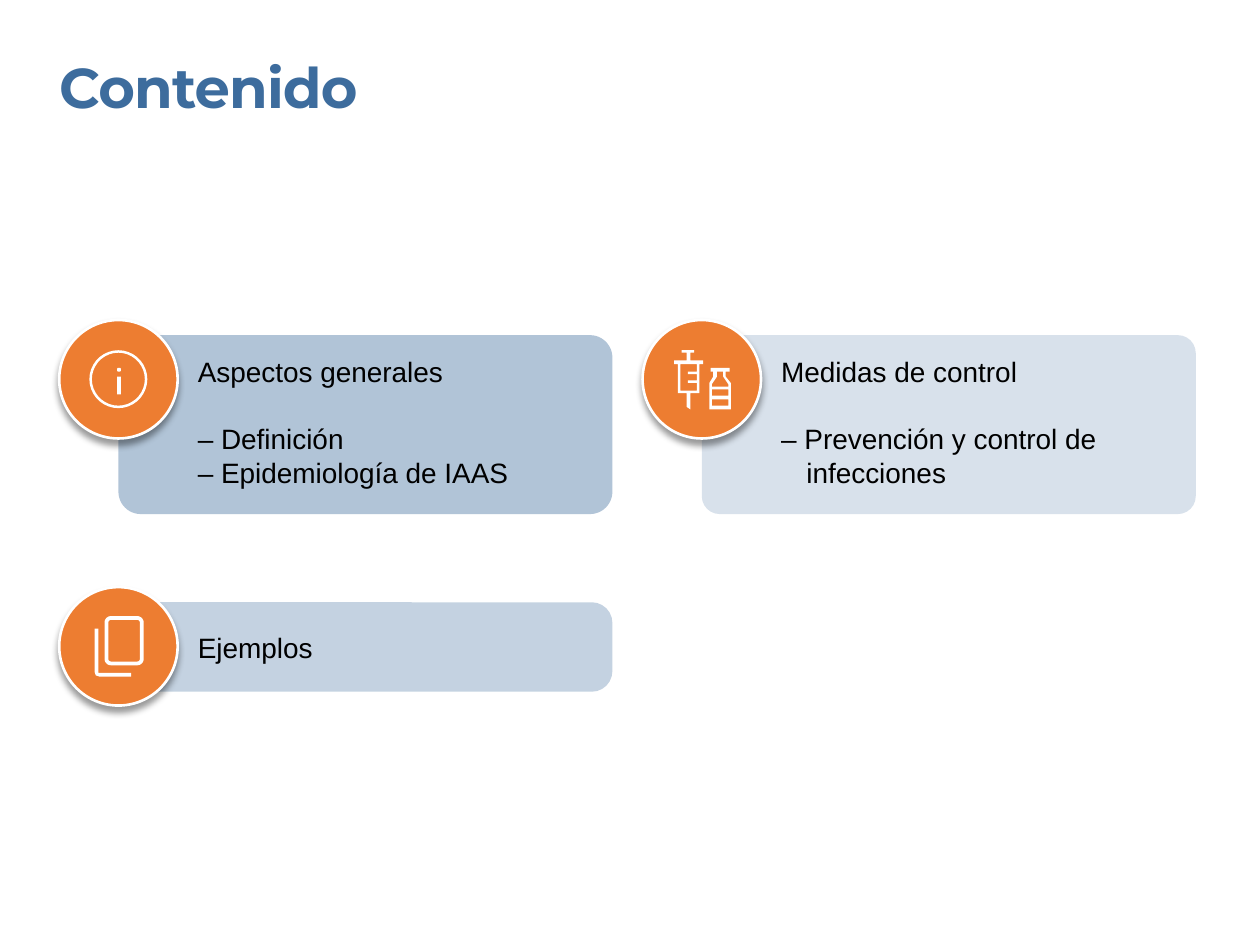
import math

import pptx
import pptx.util
import pptx.dml.color
import pptx.enum.shapes
import pptx.oxml
import pptx.oxml.ns

Inches, Pt = pptx.util.Inches, pptx.util.Pt
SHAPE = pptx.enum.shapes.MSO_SHAPE

COLORS = {"blue": "3D6C9D", "orange": "ED7D31", "white": "FFFFFF", "black": "000000"}
TITLE = "Contenido"
TITLE_FORMAT = {"name": "Montserrat", "size": Pt(32), "bold": True}
BODY_FORMAT = {"name": "Arial", "size": Pt(16)}


def rounded(x, y, width, height, radius):
    """Outline of a rounded rectangle; a large radius makes a circle."""
    centers = [(x + width - radius, y + height - radius), (x + radius, y + height - radius),
               (x + radius, y + radius), (x + width - radius, y + radius)]
    return [(cx + radius * math.cos(angle), cy + radius * math.sin(angle))
            for corner, (cx, cy) in enumerate(centers)
            for angle in (math.radians(90 * corner + 10 * step) for step in range(10))]


def bar(x, y, width, height):
    return [(x, y), (x + width, y), (x + width, y + height), (x, y + height)]


# Icon outlines in inches from the corner of their disc; inner outlines are holes
ICONS = {
    "info": [
        rounded(0.24, 0.24, 0.46, 0.46, 0.23), rounded(0.26, 0.26, 0.42, 0.42, 0.21),
        rounded(0.46, 0.38, 0.03, 0.03, 0.01), bar(0.46, 0.45, 0.03, 0.14),
    ],
    "syringe": [
        # Syringe and its graduated barrel
        [(0.38, 0.71), (0.35, 0.69), (0.35, 0.58), (0.28, 0.58), (0.28, 0.35),
         (0.25, 0.35), (0.25, 0.32), (0.35, 0.32), (0.35, 0.26), (0.31, 0.26),
         (0.31, 0.24), (0.41, 0.24), (0.41, 0.26), (0.38, 0.26), (0.38, 0.32),
         (0.48, 0.32), (0.48, 0.35), (0.45, 0.35), (0.45, 0.58), (0.38, 0.58)],
        [(0.3, 0.56), (0.43, 0.56), (0.43, 0.5), (0.36, 0.5), (0.36, 0.48), (0.43, 0.48),
         (0.43, 0.43), (0.36, 0.43), (0.36, 0.41), (0.43, 0.41), (0.43, 0.35), (0.3, 0.35)],
        # Vial and its three windows
        [(0.53, 0.71), (0.53, 0.5), (0.56, 0.45), (0.56, 0.41), (0.54, 0.41), (0.54, 0.38),
         (0.69, 0.38), (0.69, 0.41), (0.66, 0.41), (0.66, 0.45), (0.7, 0.5), (0.7, 0.71)],
        [(0.55, 0.53), (0.55, 0.51), (0.59, 0.45), (0.59, 0.41),
         (0.64, 0.41), (0.64, 0.45), (0.68, 0.51), (0.68, 0.53)],
        bar(0.55, 0.55, 0.13, 0.05), bar(0.55, 0.63, 0.13, 0.05),
    ],
    "pages": [
        rounded(0.36, 0.23, 0.31, 0.39, 0.05), rounded(0.39, 0.26, 0.25, 0.33, 0.02),
        [(0.28, 0.33), (0.31, 0.33), (0.31, 0.68), (0.57, 0.68),
         (0.57, 0.71), (0.32, 0.71), (0.29, 0.7), (0.28, 0.67)],
    ],
}

# Cards: column, disc top, height, corner, opacity, text top, heading, items, icon
CARDS = [
    (0, 2.54, 1.42, 0.125, 40, 2.81, "Aspectos generales",
     ["– Definición", "– Epidemiología de IAAS"], "info"),
    (1, 2.54, 1.42, 0.1, 20, 2.81, "Medidas de control",
     ["– Prevención y control de infecciones"], "syringe"),
    (0, 4.66, 0.71, 0.23, 30, 5, "Ejemplos", [], "pages"),
]
LEFT, COLUMN_STEP, DISC, CARD_WIDTH = 0.47, 4.63, 0.94, 3.92
LINE_HEIGHT, HANGING = Pt(19.3), Inches(0.2)


def color(name):
    return pptx.dml.color.RGBColor.from_string(COLORS[name])


def add_xml(parent, xml):
    parent.append(pptx.oxml.parse_xml(
        xml.replace(" ", f" {pptx.oxml.ns.nsdecls('a')} ", 1)))


def style(shape, fill, line=None):
    shape.shadow.inherit = False
    shape.fill.solid()
    shape.fill.fore_color.rgb = color(fill)
    if line:
        shape.line.color.rgb = color(line)
        shape.line.width = Pt(1.5)
    else:
        shape.line.fill.background()
    return shape


def add_shape(page, kind, *place):
    return page.shapes.add_shape(kind, *map(Inches, place))


def add_text(page, place, paragraphs, font_format, font_color):
    box = page.shapes.add_textbox(*map(Inches, place))
    frame = box.text_frame
    frame.word_wrap = True
    for side in ("left", "right", "top", "bottom"):
        setattr(frame, f"margin_{side}", 0)
    for index, text in enumerate(paragraphs):
        para = frame.paragraphs[0] if index == 0 else frame.add_paragraph()
        span = para.add_run()
        span.text = text
        for key, value in font_format.items():
            setattr(span.font, key, value)
        span.font.color.rgb = color(font_color)
    return frame


def add_icon(page, left, top, outlines):
    builder = None
    for outline in outlines:
        points = [(Inches(left + x), Inches(top + y)) for x, y in outline]
        if builder is None:
            builder = page.shapes.build_freeform(*points[0])
        else:
            builder.move_to(*points[0])
        builder.add_line_segments(points[1:], close=True)
    style(builder.convert_to_shape(), "white")


def add_card(page, column, top, height, corner, opacity, text_top, heading, items, icon):
    left = LEFT + column * COLUMN_STEP
    # Panel
    panel = add_shape(page, SHAPE.ROUNDED_RECTANGLE,
                      left + DISC / 2, top + 0.12, CARD_WIDTH, height)
    panel.adjustments[0] = corner
    style(panel, "blue")
    tint = panel._element.spPr.find(".//" + pptx.oxml.ns.qn("a:srgbClr"))
    add_xml(tint, f'<a:alpha val="{opacity * 1000}"/>')
    # Heading and items, with one line of space between them
    text_height = 1.08 if items else 0.27
    frame = add_text(page, (left + 1.1, text_top, 3.1, text_height),
                     [heading] + items, BODY_FORMAT, "black")
    for index, para in enumerate(frame.paragraphs):
        para.line_spacing = LINE_HEIGHT
        if index:
            indent = para._p.get_or_add_pPr()
            indent.set("marL", str(HANGING))
            indent.set("indent", str(-HANGING))
        if index == 1:
            para.space_before = LINE_HEIGHT
    # Disc with shadow and icon
    disc = style(add_shape(page, SHAPE.OVAL, left, top, DISC, DISC), "orange", "white")
    effects = disc._element.spPr.find(pptx.oxml.ns.qn("a:effectLst"))
    add_xml(effects, f'<a:outerShdw blurRad="{Pt(4)}" dist="{Pt(3)}" dir="5400000" '
                     f'rotWithShape="0"><a:srgbClr val="{COLORS["black"]}">'
                     '<a:alpha val="40000"/></a:srgbClr></a:outerShdw>')
    add_icon(page, left, top, ICONS[icon])


def main():
    deck = pptx.Presentation()
    deck.slide_width, deck.slide_height = Inches(10), Inches(7.5)
    page = deck.slides.add_slide(deck.slide_layouts[6])
    title = add_text(page, (LEFT, 0.42, 8.55, 0.54), [TITLE], TITLE_FORMAT, "blue")
    title.paragraphs[0].runs[0].font._element.set("spc", "-50")
    for card in CARDS:
        add_card(page, *card)
    deck.save("out.pptx")


if __name__ == "__main__":
    main()
